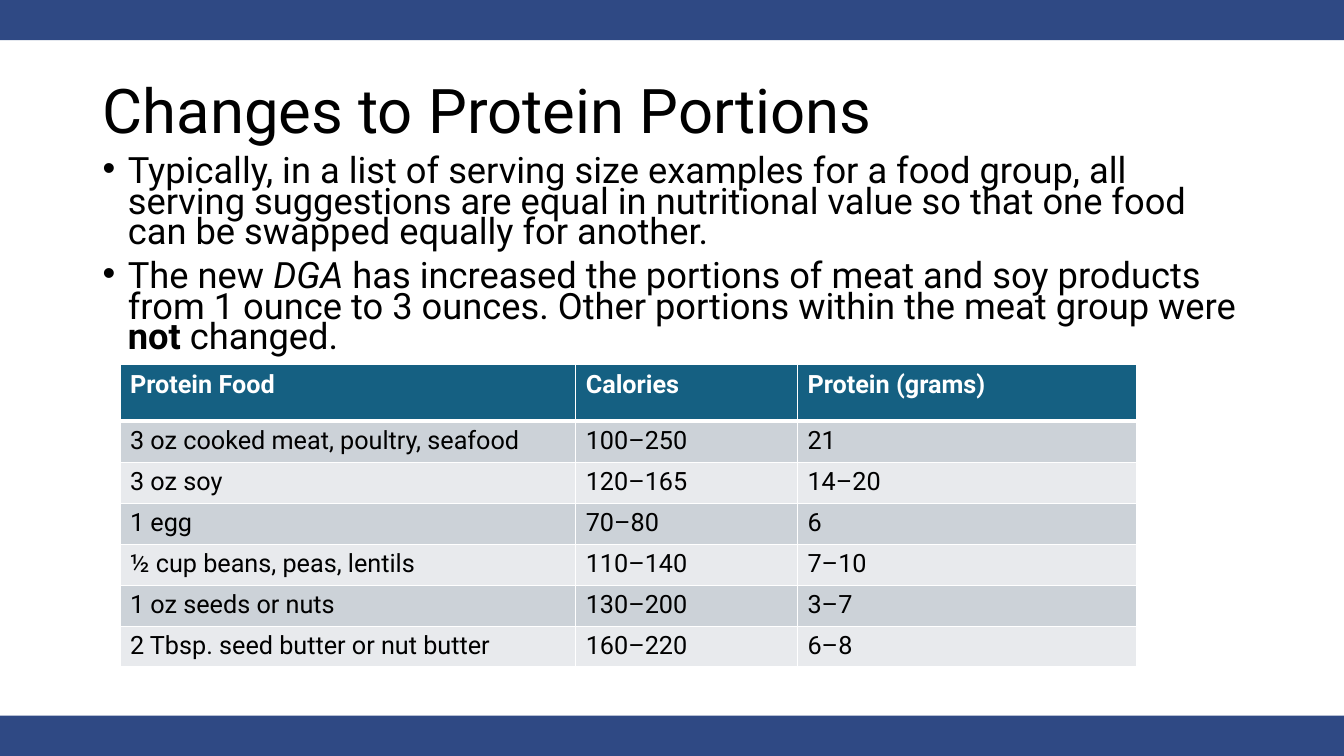
from dataclasses import dataclass

from pptx import Presentation
from pptx.dml.color import RGBColor
from pptx.enum.shapes import MSO_SHAPE
from pptx.enum.text import MSO_ANCHOR
from pptx.oxml.ns import qn
from pptx.util import Inches, Pt
from lxml import etree

RECT = MSO_SHAPE.RECTANGLE
MIDDLE = MSO_ANCHOR.MIDDLE


@dataclass
class Theme:
    font: str = "Roboto"
    bar: str = "2F4984"
    text: str = "000000"
    white: str = "FFFFFF"
    header: str = "156082"
    bands: tuple = ("CCD2D8", "E8EAED")
    title_size: float = 44
    body_size: float = 25.9
    table_size: float = 18


theme = Theme()


def style(r, size, color, bold=False, italic=False):
    r.font.name = theme.font
    r.font.size = Pt(size)
    r.font.color.rgb = RGBColor.from_string(color)
    r.font.bold = bold
    r.font.italic = italic


def add_border(cell, side, width):
    ln = etree.SubElement(cell._tc.get_or_add_tcPr(), qn(f"a:ln{side}"), w=str(Pt(width)))
    fill = etree.SubElement(ln, qn("a:solidFill"))
    etree.SubElement(fill, qn("a:srgbClr"), val=theme.white)


prs = Presentation()
prs.slide_width, prs.slide_height = Inches(13.33), Inches(7.5)
s = prs.slides.add_slide(prs.slide_layouts[6])

# Bars along the top and bottom edges
for top in (0, 7.1):
    sp = s.shapes.add_shape(RECT, 0, Inches(top), prs.slide_width, Inches(0.4))
    sp.shadow.inherit = False
    sp.fill.solid()
    sp.fill.fore_color.rgb = RGBColor.from_string(theme.bar)
    sp.line.fill.background()

# Title
tf = s.shapes.add_textbox(Inches(0.92), Inches(0.4), Inches(11.5), Inches(1.45)).text_frame
tf.word_wrap = True
tf.vertical_anchor = MIDDLE
p = tf.paragraphs[0]
p.text = "Changes to Protein Portions"
p.line_spacing = 0.9
style(p.runs[0], theme.title_size, theme.text)

# Bullets, as runs of (text, bold, italic)
bullets = [
    [("Typically, in a list of serving size examples for a food group, all serving suggestions "
      "are equal in nutritional value so that one food can be swapped equally for another.",
      False, False)],
    [("The new ", False, False),
     ("DGA", False, True),
     (" has increased the portions of meat and soy products from 1 ounce to 3 ounces. "
      "Other portions within the meat group were ", False, False),
     ("not", True, False),
     (" changed.", False, False)],
]
tf = s.shapes.add_textbox(Inches(0.92), Inches(1.53), Inches(11.5), Inches(2.22)).text_frame
tf.word_wrap = True
for i, runs in enumerate(bullets):
    p = tf.add_paragraph() if i else tf.paragraphs[0]
    pPr = p._p.get_or_add_pPr()
    pPr.set("marL", str(Inches(0.25)))
    pPr.set("indent", str(-Inches(0.25)))
    etree.SubElement(pPr, qn("a:buFont"), typeface="Arial")
    etree.SubElement(pPr, qn("a:buChar"), char="•")
    p.line_spacing = 0.7
    if i:
        p.space_before = Pt(10)
    for text, bold, italic in runs:
        r = p.add_run()
        r.text = text
        style(r, theme.body_size, theme.text, bold, italic)

# Protein table
rows = [
    ("Protein Food", "Calories", "Protein (grams)"),
    ("3 oz cooked meat, poultry, seafood", "100–250", "21"),
    ("3 oz soy", "120–165", "14–20"),
    ("1 egg", "70–80", "6"),
    ("½ cup beans, peas, lentils", "110–140", "7–10"),
    ("1 oz seeds or nuts", "130–200", "3–7"),
    ("2 Tbsp. seed butter or nut butter", "160–220", "6–8"),
]
table = s.shapes.add_table(len(rows), 3, Inches(1.19), Inches(3.62),
                           Inches(10.08), Inches(3)).table
for column, width in zip(table.columns, (4.52, 2.2, 3.36)):
    column.width = Inches(width)
header_height = Inches(0.56)
row_height = (Inches(3) - header_height) // (len(rows) - 1)
for i, row in enumerate(rows):
    is_header = i == 0
    table.rows[i].height = header_height if is_header else row_height
    for j, text in enumerate(row):
        cell = table.cell(i, j)
        cell.text = text
        style(cell.text_frame.paragraphs[0].runs[0], theme.table_size,
              theme.white if is_header else theme.text, bold=is_header)
        for side in "LRTB":
            thick = (is_header and side == "B") or (i == 1 and side == "T")
            add_border(cell, side, 3 if thick else 1)
        cell.fill.solid()
        cell.fill.fore_color.rgb = RGBColor.from_string(
            theme.header if is_header else theme.bands[(i - 1) % 2])

prs.save("out.pptx")
